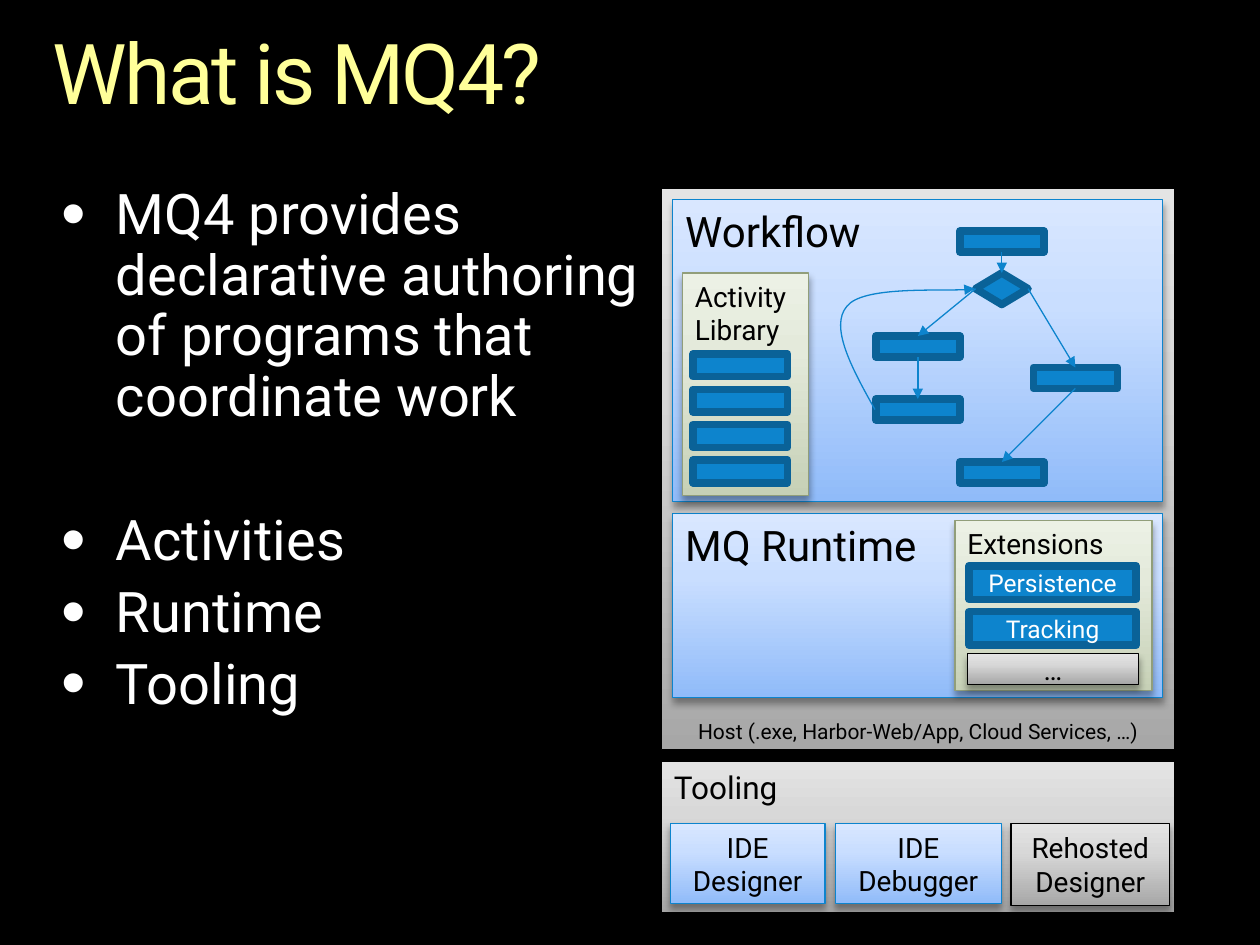
from lxml.etree import SubElement
from pptx import Presentation
from pptx.dml.color import RGBColor
from pptx.enum.shapes import MSO_CONNECTOR, MSO_SHAPE
from pptx.enum.text import MSO_ANCHOR, PP_ALIGN
from pptx.oxml.ns import qn
from pptx.util import Pt

FONT = "Roboto"
BLACK, WHITE = RGBColor(0, 0, 0), RGBColor(255, 255, 255)
YELLOW = RGBColor(0xFF, 0xFF, 0x99)
BLUE, DARK_BLUE = RGBColor(0x0D, 0x84, 0xCD), RGBColor(0x0A, 0x62, 0x98)
OLIVE = RGBColor(0x91, 0x9E, 0x7A)

# Panel styles: gradient colours at 0, 65 and 100 percent, then the outline
STYLES = {
    "gray": (("A7A7A7", "D8D8D8", "E4E4E4"), BLACK),
    "blue": (("90BBF9", "C9DEFF", "D9E7FF"), BLUE),
    "green": (("C6D0B6", "E4EADB", "ECF1E5"), OLIVE),
}
TOP, MIDDLE, BOTTOM = MSO_ANCHOR.TOP, MSO_ANCHOR.MIDDLE, MSO_ANCHOR.BOTTOM

TITLE = "What is MQ4?"
# Text and space before
BULLETS = [
    ("MQ4 provides declarative authoring of programs that coordinate work", 0),
    ("Activities", 48),
    ("Runtime", 6.4),
    ("Tooling", 6.4),
]
# Text, style, (left, top, width, height), size, anchor
PANELS = [
    ("Host (.exe, Harbor-Web/App, Cloud Services, …)", "gray", (378, 107.5, 293.5, 321), 12, BOTTOM),
    ("MQ Runtime", "blue", (384.5, 293.5, 280, 105), 24, TOP),
    ("Extensions", "green", (545.75, 297.5, 112.5, 97), 16, TOP),
    ("…", "gray", (552.75, 373.5, 98, 17.5), 16, MIDDLE),
    ("Tooling", "gray", (378, 435.25, 293.5, 86.5), 18, TOP),
    ("IDE Designer", "blue", (383, 470.5, 88.5, 46), 16, MIDDLE),
    ("IDE Debugger", "blue", (477.25, 470.5, 95, 46), 16, MIDDLE),
    ("Rehosted Designer", "gray", (577.75, 470.5, 90.5, 47), 16, MIDDLE),
    ("Workflow", "blue", (384.5, 114, 280, 172.5), 24, TOP),
    ("Activity Library", "green", (390, 156, 72, 127.25), 16, TOP),
]
EXTENSIONS = ["Persistence", "Tracking"]
LIBRARY_SIZE = 4
NODE_SIZE = (48, 12)
NODES = {
    "start": (548.5, 132),
    "left task": (500.5, 192),
    "right task": (590.5, 210),
    "loop task": (500.5, 228),
    "end": (548.5, 264),
}
DECISION = (557.5, 156, 30, 18)
# Connection sites of rectangles and diamonds
SITE_TOP, SITE_LEFT, SITE_BOTTOM, SITE_RIGHT = range(4)
LINKS = [
    ("start", SITE_BOTTOM, "decision", SITE_TOP),
    ("decision", SITE_LEFT, "left task", SITE_TOP),
    ("decision", SITE_RIGHT, "right task", SITE_TOP),
    ("left task", SITE_BOTTOM, "loop task", SITE_TOP),
    ("right task", SITE_BOTTOM, "end", SITE_TOP),
]
# Start point, then two Bézier segments of three points each
LOOP = [(500, 234), (486.5, 210), (474, 186.5), (484, 175),
        (493, 163.5), (547, 167), (557, 165)]


def style_run(r, size, color):
    r.font.name, r.font.size = FONT, Pt(size)
    r.font.color.rgb = color


def add_box(box, text="", size=14, color=WHITE, anchor=MIDDLE, kind=MSO_SHAPE.RECTANGLE):
    s = slide.shapes.add_shape(kind, *map(Pt, box))
    s.shadow.inherit = False
    if text:
        tf = s.text_frame
        tf.text, tf.word_wrap, tf.vertical_anchor = text, True, anchor
        p = tf.paragraphs[0]
        p.alignment = PP_ALIGN.LEFT if anchor == TOP else PP_ALIGN.CENTER
        style_run(p.runs[0], size, color)
    return s


def add_panel(text, style, box, size, anchor):
    s = add_box(box, text, size, BLACK, anchor)
    colors, outline = STYLES[style]
    s.fill.gradient()
    s.fill.gradient_angle = 90
    stops = s._element.spPr.find(qn("a:gradFill")).find(qn("a:gsLst"))
    stops.clear()
    for percent, color in zip((0, 65, 100), colors):
        stop = SubElement(stops, qn("a:gs"), pos=str(percent * 1000))
        SubElement(stop, qn("a:srgbClr"), val=color)
    s.line.color.rgb, s.line.width = outline, Pt(0.75)
    shadow = SubElement(s._element.spPr.find(qn("a:effectLst")), qn("a:outerShdw"),
                        blurRad=str(Pt(4)), dist=str(Pt(3)), dir="5400000", rotWithShape="0")
    tint = SubElement(shadow, qn("a:srgbClr"), val="000000")
    SubElement(tint, qn("a:alpha"), val="35000")


def add_activity(box, text="", kind=MSO_SHAPE.RECTANGLE):
    s = add_box(box, text, kind=kind)
    s.fill.solid()
    s.fill.fore_color.rgb = BLUE
    s.line.color.rgb, s.line.width = DARK_BLUE, Pt(4.33)
    return s


def style_arrow(s):
    s.line.color.rgb, s.line.width = BLUE, Pt(0.75)
    SubElement(s.line._get_or_add_ln(), qn("a:tailEnd"), type="triangle")


def add_text_box(box):
    tf = slide.shapes.add_textbox(*map(Pt, box)).text_frame
    tf.word_wrap = True
    tf.margin_left = tf.margin_right = tf.margin_top = tf.margin_bottom = 0
    return tf


def curve_path(s):
    """Turn each three straight segments of a freeform into one Bézier segment."""
    path = next(s._element.iter(qn("a:path")))
    lines = path.findall(qn("a:lnTo"))
    for i in range(0, len(lines), 3):
        curve = SubElement(path, qn("a:cubicBezTo"))
        for line in lines[i:i + 3]:
            curve.append(line[0])
            path.remove(line)


prs = Presentation()
prs.slide_width, prs.slide_height = Pt(720), Pt(540)
slide = prs.slides.add_slide(prs.slide_layouts[6])
slide.background.fill.solid()
slide.background.fill.fore_color.rgb = BLACK

tf = add_text_box((30.25, 18, 659.5, 52.5))
tf.text = TITLE
p = tf.paragraphs[0]
p.line_spacing = 0.9
style_run(p.runs[0], 48, YELLOW)
p.runs[0]._r.get_or_add_rPr().set("spc", "-150")

tf = add_text_box((35.25, 106.5, 342.75, 404.5))
for i, (text, space) in enumerate(BULLETS):
    p = tf.paragraphs[0] if i == 0 else tf.add_paragraph()
    p.text, p.line_spacing = text, 0.9
    if space:
        p.space_before = Pt(space)
    pPr = p._p.get_or_add_pPr()
    pPr.set("marL", str(Pt(31)))
    pPr.set("indent", str(Pt(-31)))
    SubElement(pPr, qn("a:buSzPct"), val="125000")
    SubElement(pPr, qn("a:buFont"), typeface="Arial")
    SubElement(pPr, qn("a:buChar"), char="•")
    style_run(p.runs[0], 32, WHITE)

for panel in PANELS:
    add_panel(*panel)
for i, name in enumerate(EXTENSIONS):
    add_activity((553.75, 323.25 + 26.25 * i, 95.5, 19.25), name)
for i in range(LIBRARY_SIZE):
    add_activity((396, 202.25 + 20.2 * i, 54, 13))

nodes = {name: add_activity(place + NODE_SIZE) for name, place in NODES.items()}
nodes["decision"] = add_activity(DECISION, kind=MSO_SHAPE.FLOWCHART_DECISION)
for source, out_site, target, in_site in LINKS:
    s = slide.shapes.add_connector(MSO_CONNECTOR.STRAIGHT, 0, 0, 0, 0)
    s.begin_connect(nodes[source], out_site)
    s.end_connect(nodes[target], in_site)
    style_arrow(s)
    SubElement(s._element.spPr, qn("a:effectLst"))

points = [(Pt(x), Pt(y)) for x, y in LOOP]
builder = slide.shapes.build_freeform(*points[0])
builder.add_line_segments(points[1:], close=False)
s = builder.convert_to_shape()
curve_path(s)
s.shadow.inherit = False
s.fill.background()
style_arrow(s)

prs.save("out.pptx")
